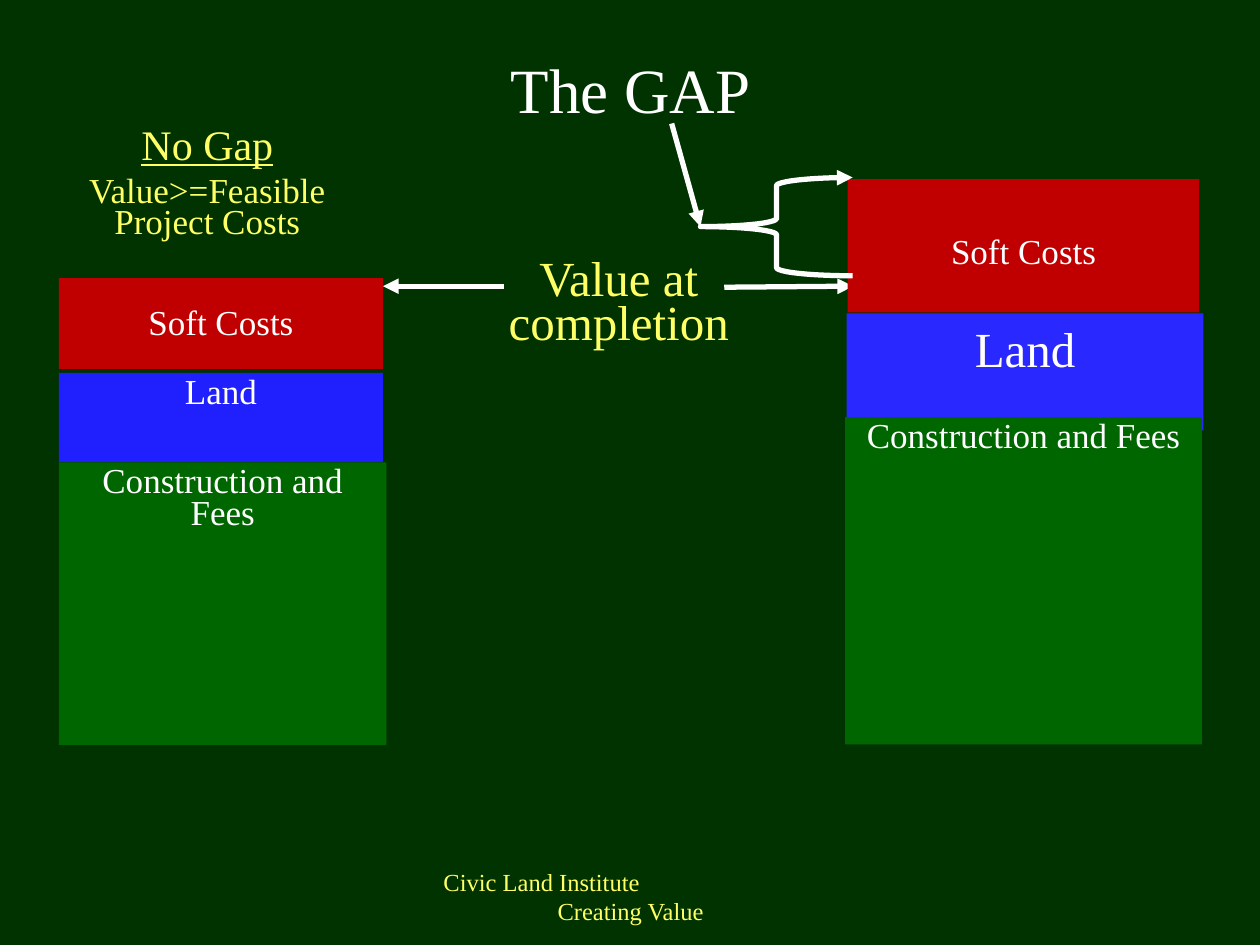
from lxml.etree import SubElement
from pptx import Presentation
from pptx.dml.color import RGBColor
from pptx.enum.shapes import MSO_CONNECTOR, MSO_SHAPE
from pptx.enum.text import MSO_ANCHOR, PP_ALIGN
from pptx.oxml.ns import qn
from pptx.util import Cm, Pt

WHITE, YELLOW = "FFFFFF", "FFFF66"
RED, GREEN, BACKDROP = "C00000", "006600", "003300"


def rgb(value):
    """Turn a hex string into a colour."""
    return RGBColor.from_string(value)


class GapSlide:
    """Holds the style and the current slide."""

    font_name = "Times New Roman"
    line_width = Pt(3)

    def __init__(self, deck):
        """Add a title-only slide with the dark backdrop."""
        self.slide = deck.slides.add_slide(deck.slide_layouts[5])
        self.slide.background.fill.solid()
        self.slide.background.fill.fore_color.rgb = rgb(BACKDROP)

    def set_lines(self, frame, lines, color, inset=0.13, anchor=MSO_ANCHOR.TOP):
        """Fill a frame with (text, size, changes to the format) lines."""
        frame_format = {"word_wrap": True, "vertical_anchor": anchor, "margin_top": Cm(inset),
                        "margin_bottom": Cm(0.13), "margin_left": Cm(0.25), "margin_right": Cm(0.25)}
        for key, value in frame_format.items():
            setattr(frame, key, value)
        for index, (words, size, changes) in enumerate(lines):
            paragraph = frame.add_paragraph() if index else frame.paragraphs[0]
            paragraph.text = words
            layout = {"alignment": PP_ALIGN.CENTER, "line_spacing": 0.75,
                      "space_before": Pt(0.3 * size if index else 0)}
            for key, value in (layout | changes).items():
                setattr(paragraph, key, value)
            for key, value in {"name": self.font_name, "size": Pt(size)}.items():
                setattr(paragraph.font, key, value)
            paragraph.font.color.rgb = rgb(color)

    def title(self, words, bounds):
        """Place and format the title placeholder."""
        heading = self.slide.shapes.title
        for key, value in zip(("left", "top", "width", "height"), bounds):
            setattr(heading, key, Cm(value))
        self.set_lines(heading.text_frame, [(words, 36, {})], WHITE, anchor=MSO_ANCHOR.MIDDLE)

    def label(self, lines, bounds):
        """Add a yellow text box."""
        box = self.slide.shapes.add_textbox(*map(Cm, bounds))
        self.set_lines(box.text_frame, lines, YELLOW)
        return box

    def cost(self, words, fill, bounds, size=20, inset=0.13):
        """Add one block of a cost stack."""
        block = self.slide.shapes.add_shape(MSO_SHAPE.RECTANGLE, *map(Cm, bounds))
        block.shadow.inherit = False
        block.fill.solid()
        block.fill.fore_color.rgb = rgb(fill)
        block.line.fill.background()
        self.set_lines(block.text_frame, [(words, size, {})], WHITE, inset)

    def point(self, outline):
        """Give an outline the white stroke and an arrowhead at its end."""
        outline.line.color.rgb = rgb(WHITE)
        outline.line.width = self.line_width
        stroke = outline._element.spPr.find(qn("a:ln"))
        SubElement(stroke, qn("a:tailEnd"), type="triangle")

    def arrow(self, *ends):
        """Add a straight arrow."""
        connector = self.slide.shapes.add_connector(MSO_CONNECTOR.STRAIGHT, *map(Cm, ends))
        self.point(connector)
        SubElement(connector._element.spPr, qn("a:effectLst"))

    def brace(self, bounds):
        """Add the brace that spans the gap."""
        gap = self.slide.shapes.add_shape(MSO_SHAPE.LEFT_BRACE, *map(Cm, bounds))
        gap.fill.background()
        self.point(gap)
        gap.shadow.inherit = False


def main():
    """Build and save the slide."""
    deck = Presentation()
    deck.slide_width, deck.slide_height = Cm(25.4), Cm(19.05)
    page = GapSlide(deck)
    page.title("The GAP", (2.34, 1.24, 20.75, 1.42))

    page.cost("Soft Costs", RED, (1.19, 5.61, 6.53, 1.83), inset=0.64)
    page.cost("Land", "2020FF", (1.19, 7.52, 6.53, 1.8))
    page.cost("Construction and Fees", GREEN, (1.19, 9.32, 6.6, 5.7))

    page.cost("Land", "2929FF", (17.07, 6.32, 7.19, 2.36), size=28, inset=0.38)
    page.cost("Construction and Fees", GREEN, (17.04, 8.41, 7.19, 6.6))

    single = {"line_spacing": 1.0, "space_before": Pt(0)}
    page.label([("Civic Land Institute", 14, single | {"alignment": PP_ALIGN.LEFT}),
                ("Creating Value", 14, single)], (8.69, 17.35, 8.05, 1.27))
    page.label([("Value at completion", 28, {})], (9.91, 5.13, 5.13, 2.06))
    no_gap = page.label([("No Gap", 24, {}), ("Value>=Feasible Project Costs", 20, {})],
                        (1.22, 2.49, 5.92, 2.57))
    no_gap.text_frame.paragraphs[0].font.underline = True

    page.arrow(10.16, 5.77, 7.72, 5.77)
    page.arrow(14.6, 5.79, 17.2, 5.77)
    page.cost("Soft Costs", RED, (17.09, 3.61, 7.09, 2.69), inset=1.22)
    page.brace((14.12, 3.58, 3.07, 1.98))
    page.arrow(13.54, 2.49, 14.12, 4.57)
    deck.save("out.pptx")


if __name__ == "__main__":
    main()
